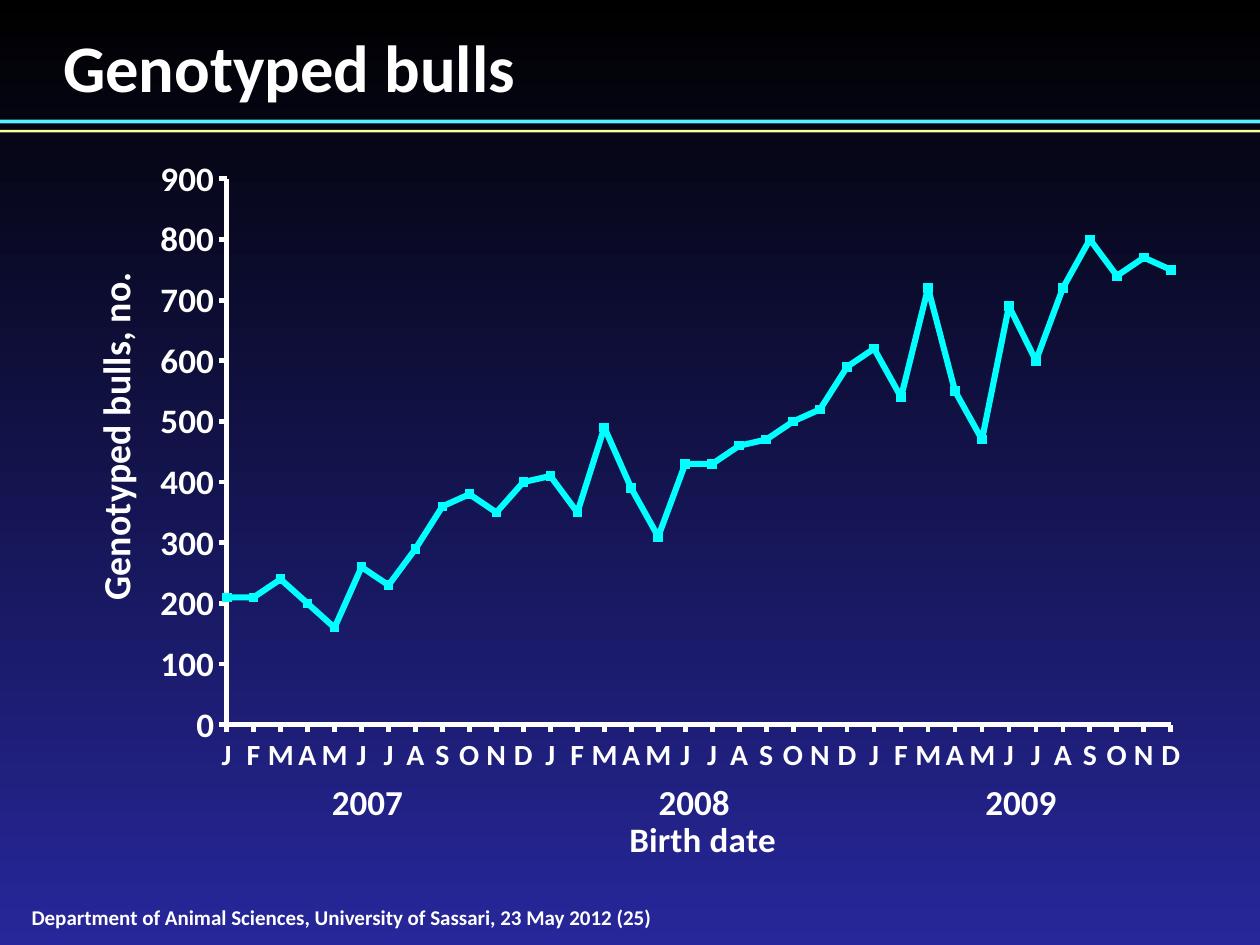
from lxml import etree
from pptx import Presentation
from pptx.chart.data import CategoryChartData
from pptx.dml.color import RGBColor
from pptx.enum.chart import XL_CHART_TYPE, XL_TICK_MARK
from pptx.enum.shapes import MSO_SHAPE
from pptx.enum.text import MSO_ANCHOR, PP_ALIGN
from pptx.oxml.ns import qn
from pptx.util import Inches, Pt

LINE_CHART = XL_CHART_TYPE.LINE
TICK_OUTSIDE, TICK_NONE = XL_TICK_MARK.OUTSIDE, XL_TICK_MARK.NONE
RECTANGLE = MSO_SHAPE.RECTANGLE
MIDDLE = MSO_ANCHOR.MIDDLE
LEFT, CENTER = PP_ALIGN.LEFT, PP_ALIGN.CENTER

FONT = "Calibri"
WHITE, CYAN = "FFFFFF", "00FFFF"
YEARS = ["2007", "2008", "2009"]
MONTHS = "JFMAMJJASOND"
BULLS = [
    210, 210, 240, 200, 160, 260, 230, 290, 360, 380, 350, 400,
    410, 350, 490, 390, 310, 430, 430, 460, 470, 500, 520, 590,
    620, 540, 720, 550, 470, 690, 600, 720, 800, 740, 770, 750,
]
PLOT = (0.147, 0.046, 0.829, 0.768)  # shares of the chart's box


def color(value):
    return RGBColor.from_string(value)


def style_font(font, size):
    font.name = FONT
    font.size = Pt(size)
    font.bold = True
    font.color.rgb = color(WHITE)


def fill_text(shape, box, text, size, align=LEFT):
    shape.left, shape.top, shape.width, shape.height = map(Inches, box)
    frame = shape.text_frame
    frame.word_wrap = True
    frame.vertical_anchor = MIDDLE
    frame.margin_left = frame.margin_right = 0
    frame.margin_top = frame.margin_bottom = 0
    paragraph = frame.paragraphs[0]
    paragraph.alignment = align
    run = paragraph.add_run()
    run.text = text
    style_font(run.font, size)


def add_text(slide, box, text, size, align=LEFT):
    shape = slide.shapes.add_textbox(*map(Inches, box))
    fill_text(shape, box, text, size, align)


def add_background(slide):
    fill = slide.background.fill
    fill.gradient()
    fill.gradient_angle = 270
    for stop, position, value in zip(fill.gradient_stops, (0, 1), ("000000", "27279B")):
        stop.position = position
        stop.color.rgb = color(value)


def add_rule(slide, box, value):
    bar = slide.shapes.add_shape(RECTANGLE, *map(Inches, box))
    bar.shadow.inherit = False
    bar.fill.solid()
    bar.fill.fore_color.rgb = color(value)
    bar.line.fill.background()


def set_layout(element, index, **shares):
    """Give a chart part a manual layout, in shares of the chart's box."""
    for old in element.findall(qn("c:layout")):
        element.remove(old)
    layout = etree.Element(qn("c:layout"))
    manual = etree.SubElement(layout, qn("c:manualLayout"))
    if "w" in shares:
        etree.SubElement(manual, qn("c:layoutTarget")).set("val", "inner")
    for name in ("xMode", "yMode"):
        etree.SubElement(manual, qn("c:" + name)).set("val", "edge")
    for name, value in shares.items():
        etree.SubElement(manual, qn("c:" + name)).set("val", str(value))
    element.insert(index, layout)


def style_axis(axis, label_size, title, title_size, x, y):
    axis.has_major_gridlines = False
    axis.major_tick_mark = TICK_OUTSIDE
    axis.minor_tick_mark = TICK_NONE
    axis.format.line.color.rgb = color(WHITE)
    axis.format.line.width = Pt(2.75)
    style_font(axis.tick_labels.font, label_size)
    run = axis.axis_title.text_frame.paragraphs[0].add_run()
    run.text = title
    style_font(run.font, title_size)
    set_layout(axis.axis_title._element, 1, x=x, y=y)


def add_bull_chart(slide, box):
    data = CategoryChartData()
    data.categories = list(MONTHS * len(YEARS))
    data.add_series("Series 1", BULLS)
    chart = slide.shapes.add_chart(LINE_CHART, *map(Inches, box), data).chart
    chart.has_legend = False
    chart.has_title = False
    style_font(chart.font, 20)
    set_layout(chart._chartSpace.chart.plotArea, 0, **dict(zip("xywh", PLOT)))

    # Series
    chart.plots[0].vary_by_categories = False
    series = chart.plots[0].series[0]
    series.smooth = False
    series.format.line.color.rgb = color(CYAN)
    series.format.line.width = Pt(3.5)
    series.marker.style = None
    # Axes
    months, counts = chart.category_axis, chart.value_axis
    style_axis(months, 17, "Birth date", 20, 0.495, 0.932)
    style_axis(counts, 20, "Genotyped bulls, no.", 22, 0.02, 0.177)
    counts.minimum_scale, counts.maximum_scale, counts.major_unit = 0, 900, 100

    # Label every month, and start the line on the value axis
    skip = etree.Element(qn("c:tickLblSkip"))
    skip.set("val", "1")
    months._element.find(qn("c:noMultiLvlLbl")).addprevious(skip)
    between = counts._element.find(qn("c:crossBetween"))
    if between is None:
        between = etree.Element(qn("c:crossBetween"))
        counts._element.find(qn("c:crosses")).addnext(between)
    between.set("val", "midCat")


def add_year_labels(slide, box):
    left, top, width, height = box
    step = width / len(YEARS)
    for index, year in enumerate(YEARS):
        add_text(slide, (left + index * step, top, step, height), year, 20, CENTER)


def main():
    presentation = Presentation()
    presentation.slide_width, presentation.slide_height = Inches(10), Inches(7.5)
    slide = presentation.slides.add_slide(presentation.slide_layouts[5])
    add_background(slide)

    # Footer, header rules and title
    add_text(slide, (0.25, 7.18, 5.22, 0.2),
             "Department of Animal Sciences, University of Sassari, 23 May 2012 (25)", 12)
    add_rule(slide, (0, 0.95, 10, 0.03), "5BEFFF")
    add_rule(slide, (0, 1.03, 10, 0.02), "FFFF99")
    fill_text(slide.shapes.title, (0.5, 0.2, 9, 0.64), "Genotyped bulls", 38)

    # Chart with the years under its months
    add_bull_chart(slide, (0.47, 1.16, 9.04, 5.76))
    add_year_labels(slide, (1.62, 6.2, 7.78, 0.33))
    presentation.save("out.pptx")


if __name__ == "__main__":
    main()
